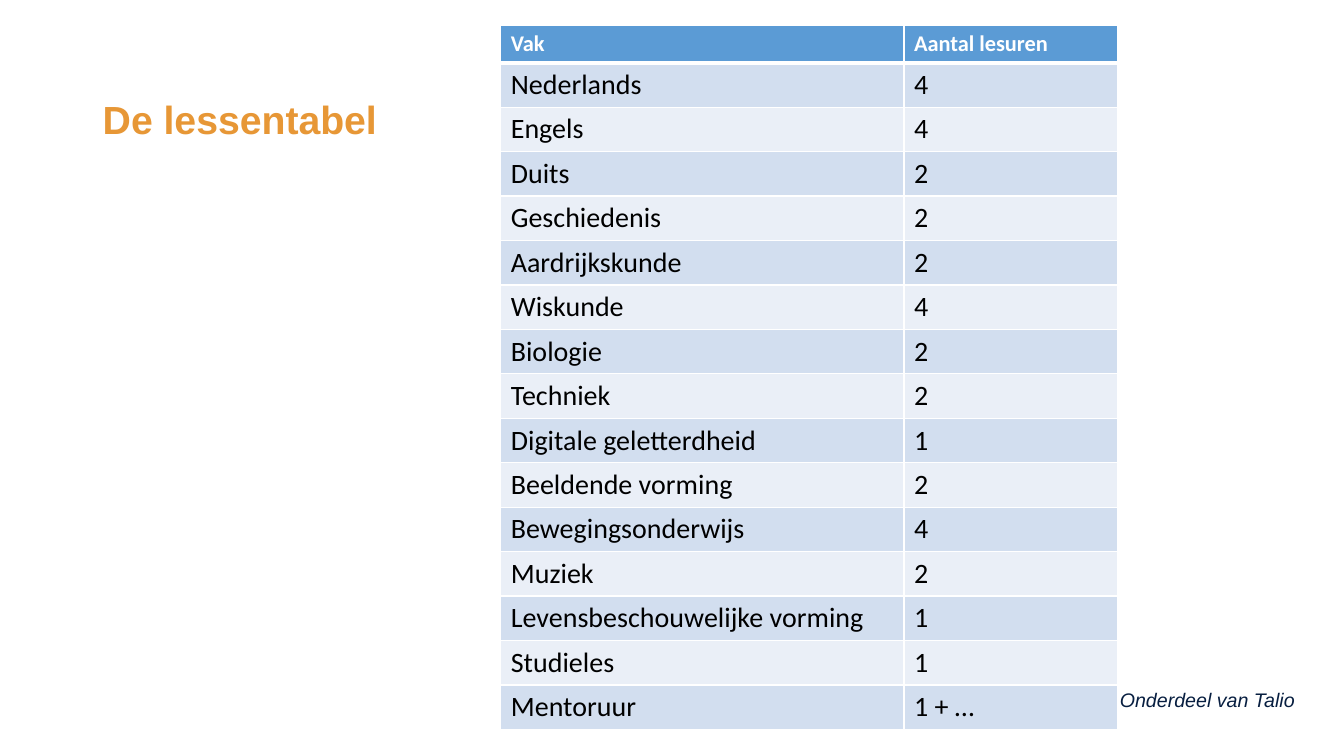
from dataclasses import dataclass

from lxml import etree
from pptx import Presentation
from pptx import util as u
from pptx.dml.color import RGBColor
from pptx.enum import text
from pptx.oxml.ns import qn

WHITE = "FFFFFF"
HEADER_FILL = "5B9BD5"
BAND_FILLS = ("D2DEEF", "EAEFF7")
COLUMN_WIDTHS = (u.Cm(10.16), u.Cm(5.38))
HEADER_HEIGHT, ROW_HEIGHT = u.Cm(0.94), u.Cm(1.12)


@dataclass(frozen=True)
class Style:
    size: int
    color: str
    font: str = "Calibri"
    bold: bool = False
    italic: bool = False


@dataclass(frozen=True)
class Label:
    words: str
    left: float
    top: float
    width: float
    height: float
    anchor: text.MSO_ANCHOR
    style: Style


@dataclass(frozen=True)
class Subject:
    name: str
    hours: str


HEADER_STYLE = Style(16, WHITE, bold=True)
BODY_STYLE = Style(20, "000000")

LABELS = (
    Label("De lessentabel", 2.34, 1.22, 29.21, 3.68, text.MSO_ANCHOR.MIDDLE,
          Style(28, "E79736", "Arial", bold=True)),
    Label("Onderdeel van Talio", 27.97, 16.84, 5.31, 1.22, text.MSO_ANCHOR.BOTTOM,
          Style(14, "071E40", "Arial", italic=True)),
)

HEADER = Subject("Vak", "Aantal lesuren")
SUBJECTS = (
    Subject("Nederlands", "4"),
    Subject("Engels", "4"),
    Subject("Duits", "2"),
    Subject("Geschiedenis", "2"),
    Subject("Aardrijkskunde", "2"),
    Subject("Wiskunde", "4"),
    Subject("Biologie", "2"),
    Subject("Techniek", "2"),
    Subject("Digitale geletterdheid", "1"),
    Subject("Beeldende vorming", "2"),
    Subject("Bewegingsonderwijs", "4"),
    Subject("Muziek", "2"),
    Subject("Levensbeschouwelijke vorming", "1"),
    Subject("Studieles", "1"),
    Subject("Mentoruur", "1 + …"),
)


def rgb(value: str) -> RGBColor:
    return RGBColor.from_string(value)


def write(para, words: str, style: Style) -> None:
    para.text = words
    font = para.font
    font.name, font.size = style.font, u.Pt(style.size)
    font.bold, font.italic = style.bold, style.italic
    font.color.rgb = rgb(style.color)


def add_label(slide, label: Label) -> None:
    box = slide.shapes.add_textbox(u.Cm(label.left), u.Cm(label.top),
                                   u.Cm(label.width), u.Cm(label.height))
    frame = box.text_frame
    frame.word_wrap = True
    frame.vertical_anchor = label.anchor
    para = frame.paragraphs[0]
    para.line_spacing = 0.9
    write(para, label.words, label.style)


def add_borders(cell, top: int, bottom: int) -> None:
    """Draw white borders, 1 pt at the sides; call before setting the fill."""
    properties = cell._tc.get_or_add_tcPr()
    for side, points in (("L", 1), ("R", 1), ("T", top), ("B", bottom)):
        line = etree.SubElement(properties, qn(f"a:ln{side}"), w=str(u.Pt(points)))
        fill = etree.SubElement(line, qn("a:solidFill"))
        etree.SubElement(fill, qn("a:srgbClr"), val=WHITE)


def add_timetable(slide) -> None:
    rows = (HEADER, *SUBJECTS)
    height = HEADER_HEIGHT + ROW_HEIGHT * len(SUBJECTS)
    table = slide.shapes.add_table(len(rows), len(COLUMN_WIDTHS), u.Cm(12.62),
                                   u.Cm(0.64), sum(COLUMN_WIDTHS), height).table
    for column, width in zip(table.columns, COLUMN_WIDTHS):
        column.width = width
    for index, subject in enumerate(rows):
        is_header = index == 0
        table.rows[index].height = HEADER_HEIGHT if is_header else ROW_HEIGHT
        fill = HEADER_FILL if is_header else BAND_FILLS[(index - 1) % 2]
        style = HEADER_STYLE if is_header else BODY_STYLE
        for cell, words in zip(table.rows[index].cells, (subject.name, subject.hours)):
            add_borders(cell, top=3 if index == 1 else 1, bottom=3 if is_header else 1)
            cell.fill.solid()
            cell.fill.fore_color.rgb = rgb(fill)
            write(cell.text_frame.paragraphs[0], words, style)


def main() -> None:
    deck = Presentation()
    deck.slide_width, deck.slide_height = u.Cm(33.87), u.Cm(19.05)
    page = deck.slides.add_slide(deck.slide_layouts[6])
    title, footer = LABELS
    add_label(page, title)
    add_timetable(page)
    add_label(page, footer)
    deck.save("out.pptx")


if __name__ == "__main__":
    main()
